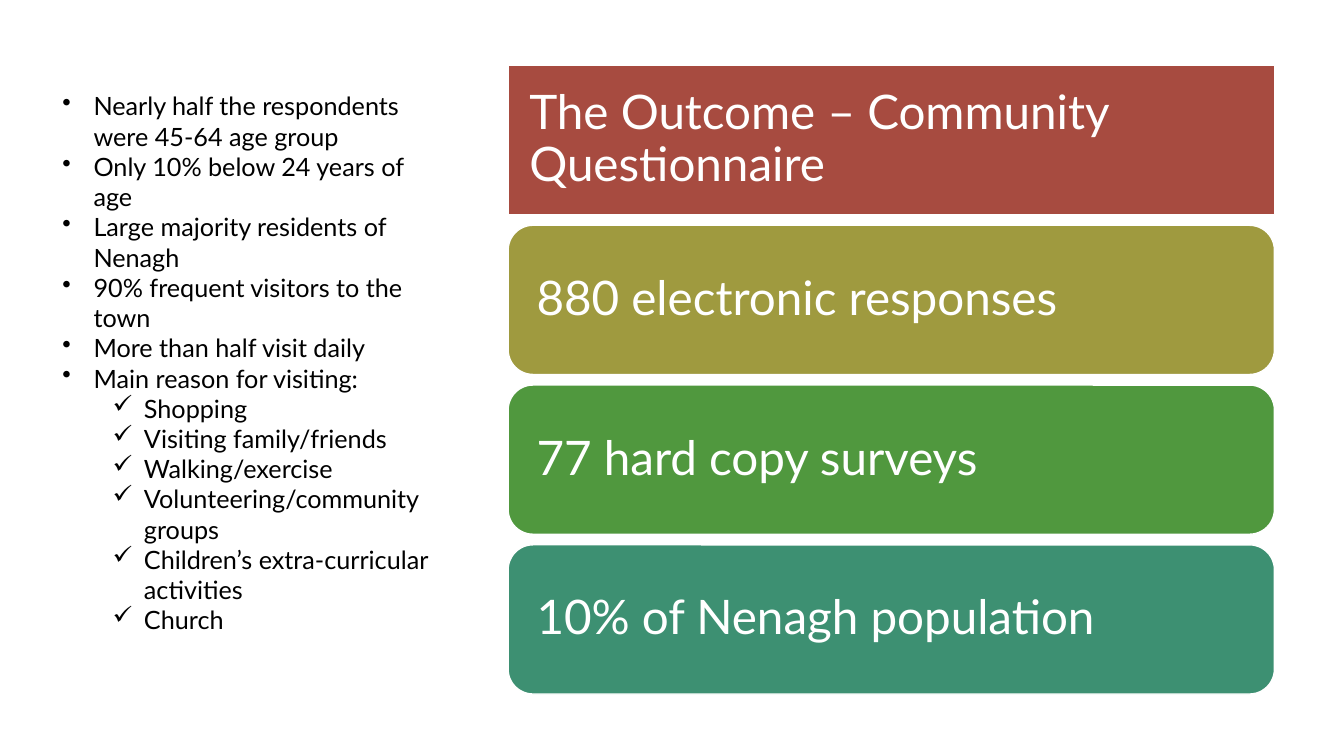
import dataclasses

import pptx
import pptx.dml.color
import pptx.enum.shapes
import pptx.enum.text
import pptx.oxml
import pptx.oxml.ns
import pptx.util

Inches = pptx.util.Inches
Pt = pptx.util.Pt
RGB = pptx.dml.color.RGBColor.from_string


@dataclasses.dataclass(frozen=True)
class Theme:
    font: str = "Lato"
    dark: str = "000000"
    light: str = "FFFFFF"
    fills: tuple = ("A74B40", "9F9A3F", "50983E", "3D9072")
    large: int = 34
    body: int = 18


@dataclasses.dataclass(frozen=True)
class Grid:
    """One column of equal rows, in inches."""
    left: float = 5.04
    top: float = 0.65
    width: float = 7.6
    height: float = 1.48
    gap: float = 0.105

    def place(self, shape, row):
        shape.left, shape.width = Inches(self.left), Inches(self.width)
        shape.top = Inches(self.top + row * (self.height + self.gap))
        shape.height = Inches(self.height)


THEME = Theme()
GRID = Grid()
TITLE = "The Outcome – Community Questionnaire"
FACTS = ("880 electronic responses", "77 hard copy surveys",
         "10% of Nenagh population")
NOTES = (
    "Nearly half the respondents were 45-64 age group",
    "Only 10% below 24 years of age",
    "Large majority residents of Nenagh",
    "90% frequent visitors to the town",
    "More than half visit daily",
    "Main reason for visiting:",
)
REASONS = (
    "Shopping", "Visiting family/friends", "Walking/exercise",
    "Volunteering/community groups", "Children’s extra-curricular activities",
    "Church",
)


def style(para, size, color):
    for run in para.runs:
        run.font.name = THEME.font
        run.font.size = Pt(size)
        run.font.color.rgb = RGB(color)


def add_xml(parent, tag, inner="", **attrs):
    """Append an element of the drawing namespace."""
    pairs = " ".join(f'{key}="{val}"' for key, val in attrs.items())
    space = pptx.oxml.ns.nsdecls("a")
    parent.append(pptx.oxml.parse_xml(
        f"<a:{tag} {space} {pairs}>{inner}</a:{tag}>"))


def fill_card(shape, row, text):
    GRID.place(shape, row)
    shape.fill.solid()
    shape.fill.fore_color.rgb = RGB(THEME.fills[row])
    shape.line.color.rgb = RGB(THEME.light)
    shape.line.width = Pt(1)
    frame = shape.text_frame
    frame.text = text
    frame.word_wrap = True
    frame.auto_size = pptx.enum.text.MSO_AUTO_SIZE.NONE
    frame.vertical_anchor = pptx.enum.text.MSO_ANCHOR.MIDDLE
    frame.margin_left = frame.margin_right = Inches(0.21)
    frame.margin_top = frame.margin_bottom = Inches(0.21)
    para = frame.paragraphs[0]
    para.alignment = pptx.enum.text.PP_ALIGN.LEFT
    para.line_spacing = 0.9
    style(para, THEME.large, THEME.light)


def add_title(slide):
    """Turn the title placeholder into the first card."""
    title = slide.shapes.title
    GRID.place(title, 0)
    add_xml(title.element.spPr, "prstGeom", "<a:avLst/>", prst="roundRect")
    fill_card(title, 0, TITLE)


def add_card(slide, row, text):
    kind = pptx.enum.shapes.MSO_SHAPE.ROUNDED_RECTANGLE
    shape = slide.shapes.add_shape(kind, 0, 0, 0, 0)
    shape.shadow.inherit = False
    fill_card(shape, row, text)


def set_bullet(para, mark, level):
    para.level = level
    props = para._p.get_or_add_pPr()
    props.set("marL", str(Inches(0.31 + 0.5 * level)))
    props.set("indent", str(Inches(-0.31)))
    add_xml(props, "buChar", char=mark)


def add_list(slide, left, top, width, height):
    box = slide.shapes.add_textbox(*map(Inches, (left, top, width, height)))
    frame = box.text_frame
    frame.word_wrap = True
    frame.auto_size = pptx.enum.text.MSO_AUTO_SIZE.SHAPE_TO_FIT_TEXT
    frame.text = "\n".join(NOTES + REASONS)
    for index, para in enumerate(frame.paragraphs):
        nested = index >= len(NOTES)
        set_bullet(para, "✓" if nested else "•", int(nested))
        style(para, THEME.body, THEME.dark)


def main():
    deck = pptx.Presentation()
    deck.slide_width, deck.slide_height = Inches(13.33), Inches(7.5)
    slide = deck.slides.add_slide(deck.slide_layouts.get_by_name("Title Only"))
    add_title(slide)
    for row, fact in enumerate(FACTS, start=1):
        add_card(slide, row, fact)
    add_list(slide, 0.52, 0.85, 3.94, 5.55)
    deck.save("out.pptx")


if __name__ == "__main__":
    main()
